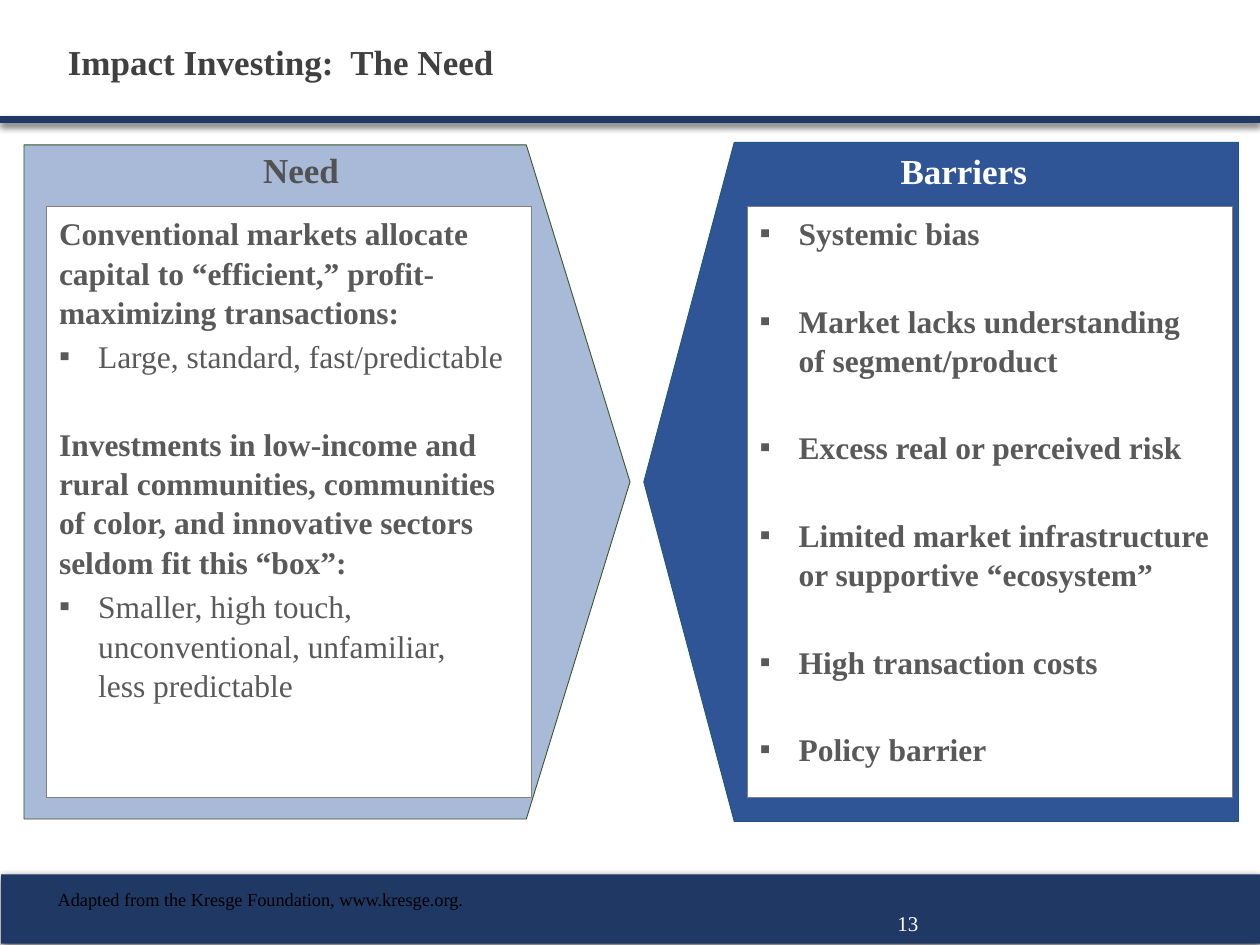
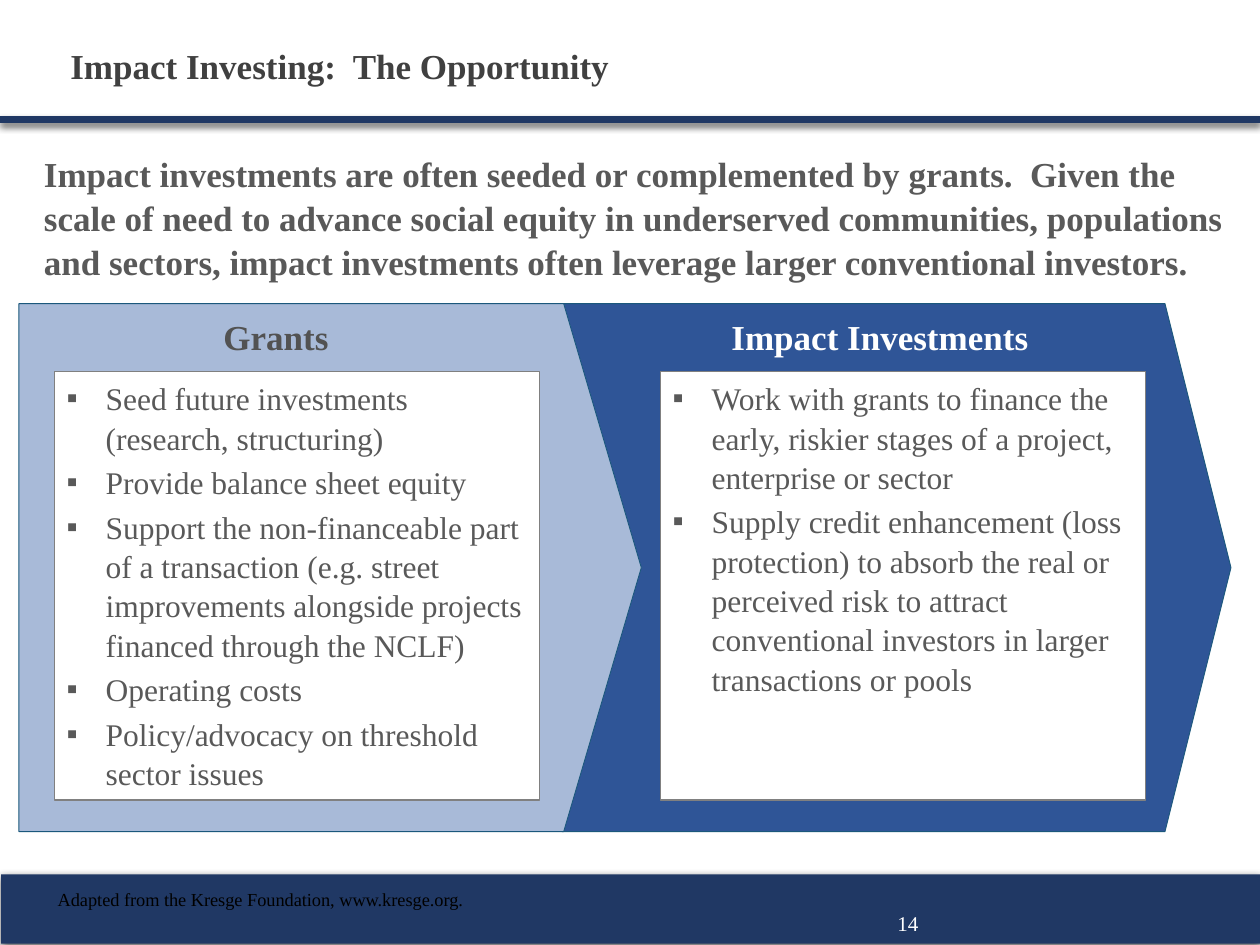
"""Build two impact investing slides with facing arrow panels."""
from lxml import etree
from pptx import Presentation
from pptx.dml.color import RGBColor
from pptx.enum.shapes import MSO_SHAPE
from pptx.enum.text import MSO_ANCHOR, PP_ALIGN
from pptx.oxml import parse_xml
from pptx.oxml.ns import nsdecls, qn
from pptx.util import Inches, Pt

RECTANGLE, PENTAGON = MSO_SHAPE.RECTANGLE, MSO_SHAPE.PENTAGON
TOP, MIDDLE = MSO_ANCHOR.TOP, MSO_ANCHOR.MIDDLE
LEFT, CENTER = PP_ALIGN.LEFT, PP_ALIGN.CENTER

FONT = "Times New Roman"
NAVY = RGBColor(0x20, 0x38, 0x64)
BLUE = RGBColor(0x2F, 0x55, 0x97)
PALE_BLUE = RGBColor(0xA8, 0xBA, 0xD8)
TEAL = RGBColor(0x1B, 0x58, 0x7C)
GREEN = RGBColor(0x38, 0x57, 0x23)
WHITE = RGBColor(0xFF, 0xFF, 0xFF)
BLACK = RGBColor(0, 0, 0)
TITLE_GRAY = RGBColor(0x40, 0x40, 0x40)
HEADING_GRAY = RGBColor(0x52, 0x52, 0x52)
BODY_GRAY = RGBColor(0x59, 0x59, 0x59)
BORDER_GRAY = RGBColor(0x80, 0x80, 0x80)

SOURCE = "Adapted from the Kresge Foundation, www.kresge.org."
CARD_WIDTH = 3.85
LINE_SPACING = 1.04
BULLET_INDENT = 0.31
BLANK_LINE = 24.5

PLAIN_BULLET = {"bullet": True}
BOLD = {"bold": True}
BOLD_BULLET = {"bullet": True, "bold": True}

NEED_ITEMS = [
    ("Conventional markets allocate capital to “efficient,” profit-maximizing transactions:", BOLD),
    ("Large, standard, fast/predictable", PLAIN_BULLET),
    ("Investments in low-income and rural communities, communities of color, "
     "and innovative sectors seldom fit this “box”:", {"bold": True, "before": BLANK_LINE}),
    ("Smaller, high touch, unconventional, unfamiliar,\vless predictable", PLAIN_BULLET),
]
BARRIERS = [
    "Systemic bias",
    "Market lacks understanding\vof segment/product",
    "Excess real or perceived risk",
    "Limited market infrastructure or supportive “ecosystem”",
    "High transaction costs",
    "Policy barrier",
]
BARRIER_ITEMS = [(text, {**BOLD_BULLET, "before": BLANK_LINE if index else 0})
                 for index, text in enumerate(BARRIERS)]
GRANT_ITEMS = [(text, PLAIN_BULLET) for text in (
    "Seed future investments (research, structuring)",
    "Provide balance sheet equity",
    "Support the non-financeable part of a transaction (e.g. street improvements "
    "alongside projects financed through the NCLF)",
    "Operating costs",
    "Policy/advocacy on threshold sector issues",
)]
INVESTMENT_ITEMS = [(text, PLAIN_BULLET) for text in (
    "Work with grants to finance the early, riskier stages of a project, enterprise or sector",
    "Supply credit enhancement (loss protection) to absorb the real or perceived risk "
    "to attract conventional investors in larger transactions or pools",
)]

SLIDES = [
    {
        "number": "13",
        "title": "Impact Investing:  The Need",
        "title_box": (0.44, 0.15, 9.17, 0.67),
        "intro": None,
        "card_rows": (1.64, 4.69),
        "panels": [
            {"heading": "Need", "box": (0.19, 1.15, 4.81, 5.35), "point": 0.171,
             "fill": PALE_BLUE, "line": GREEN, "color": HEADING_GRAY,
             "heading_top": 0.03, "card_left": 0.37, "items": NEED_ITEMS},
            {"heading": "Barriers", "box": (5.11, 1.13, 4.72, 5.39), "point": 0.152,
             "fill": BLUE, "line": TEAL, "color": WHITE, "flip": True,
             "heading_top": 0.06, "card_left": 5.93, "items": BARRIER_ITEMS},
        ],
    },
    {
        "number": "14",
        "title": "Impact Investing:  The Opportunity",
        "title_box": (0.46, 0.29, 9.26, 0.46),
        "intro": "Impact investments are often seeded or complemented by grants.  Given the scale "
                 "of need to advance social equity in underserved communities, populations and "
                 "sectors, impact investments often leverage larger conventional investors.",
        "card_rows": (2.95, 3.4),
        "panels": [
            {"heading": "Impact Investments", "box": (4.46, 2.41, 5.31, 4.19), "point": 0.125,
             "fill": BLUE, "line": TEAL, "color": WHITE,
             "heading_top": 0.09, "card_left": 5.24, "items": INVESTMENT_ITEMS},
            {"heading": "Grants", "box": (0.15, 2.41, 4.94, 4.19), "point": 0.147,
             "fill": PALE_BLUE, "line": TEAL, "color": HEADING_GRAY, "heading_right": 0.65,
             "heading_top": 0.09, "card_left": 0.43, "items": GRANT_ITEMS},
        ],
    },
]


def add_bullet(paragraph):
    """Give a paragraph a square bullet and a hanging indent."""
    properties = paragraph._p.get_or_add_pPr()
    properties.set("marL", str(Inches(BULLET_INDENT)))
    properties.set("indent", str(-Inches(BULLET_INDENT)))
    etree.SubElement(properties, qn("a:buFont")).set("typeface", FONT)
    etree.SubElement(properties, qn("a:buChar")).set("char", "▪")


def write_text(frame, text, *, size=18, color=BODY_GRAY, bold=False, align=LEFT,
               anchor=TOP, bullet=False, before=0, after=0, spacing=None):
    """Write one formatted paragraph, after any text already in the frame."""
    frame.word_wrap = True
    frame.vertical_anchor = anchor
    paragraph = frame.add_paragraph() if frame.text else frame.paragraphs[0]
    paragraph.text = text
    if bullet:
        add_bullet(paragraph)
    paragraph.alignment = align
    paragraph.space_before, paragraph.space_after = Pt(before), Pt(after)
    if spacing:
        paragraph.line_spacing = spacing
    for run in paragraph.runs:
        run.font.name, run.font.size, run.font.bold = FONT, Pt(size), bold
        run.font.color.rgb = color


def add_text(slide, box, text, **text_format):
    """Add a text box with one paragraph."""
    text_box = slide.shapes.add_textbox(*map(Inches, box))
    write_text(text_box.text_frame, text, **text_format)


def add_block(slide, kind, box, fill, line=None, line_width=0.75):
    """Add a filled preset shape."""
    shape = slide.shapes.add_shape(kind, *map(Inches, box))
    shape.shadow.inherit = False
    shape.fill.solid()
    shape.fill.fore_color.rgb = fill
    if line is None:
        shape.line.fill.background()
    else:
        shape.line.color.rgb = line
        shape.line.width = Pt(line_width)
    return shape


def add_band(slide, box, line=None):
    """Add a navy band with a soft shadow below it."""
    band = add_block(slide, RECTANGLE, box, NAVY, line)
    effects = band._element.spPr.find(qn("a:effectLst"))
    effects.append(parse_xml(
        f'<a:outerShdw {nsdecls("a")} blurRad="{Pt(4.5)}" dist="{Pt(1.5)}" dir="5400000" '
        'algn="ctr" rotWithShape="0"><a:srgbClr val="000000"><a:alpha val="63000"/>'
        '</a:srgbClr></a:outerShdw>'))


def add_panel(slide, panel):
    """Add an arrow panel with its heading."""
    shape = add_block(slide, PENTAGON, panel["box"], panel["fill"], panel["line"], 0.5)
    shape.adjustments[0] = panel["point"]
    if panel.get("flip"):
        shape._element.spPr.xfrm.set("flipH", "1")
    frame = shape.text_frame
    frame.margin_top = Inches(panel["heading_top"])
    frame.margin_right = Inches(panel.get("heading_right", 0.1))
    write_text(frame, panel["heading"], size=20, color=panel["color"], bold=True, align=CENTER)


def add_card(slide, panel, top, height):
    """Add the white card that lists the points of a panel."""
    card = add_block(slide, RECTANGLE, (panel["card_left"], top, CARD_WIDTH, height),
                     WHITE, BORDER_GRAY)
    for text, text_format in panel["items"]:
        write_text(card.text_frame, text, after=3, spacing=LINE_SPACING, **text_format)


def build_slide(presentation, content):
    """Build one slide from its content."""
    slide = presentation.slides.add_slide(presentation.slide_layouts[6])
    add_band(slide, (0.01, 6.94, 10, 0.55))
    add_band(slide, (0, 0.93, 10, 0.04), NAVY)
    add_text(slide, (6.93, 7.13, 0.55, 0.4), content["number"], size=12, color=WHITE,
             align=CENTER, anchor=MIDDLE)
    add_text(slide, content["title_box"], content["title"], size=20, color=TITLE_GRAY,
             bold=True, anchor=MIDDLE)
    if content["intro"]:
        add_text(slide, (0.25, 1.15, 9.58, 1.11), content["intro"], size=20, bold=True,
                 after=3, spacing=LINE_SPACING)
    for panel in content["panels"]:
        add_panel(slide, panel)
    for panel in content["panels"]:
        add_card(slide, panel, *content["card_rows"])
    add_text(slide, (0.36, 7, 5.07, 0.4), SOURCE, size=10.5, color=BLACK)


def main():
    """Build and save the presentation."""
    presentation = Presentation()
    presentation.slide_width, presentation.slide_height = Inches(10), Inches(7.5)
    for content in SLIDES:
        build_slide(presentation, content)
    presentation.save("out.pptx")


if __name__ == "__main__":
    main()
